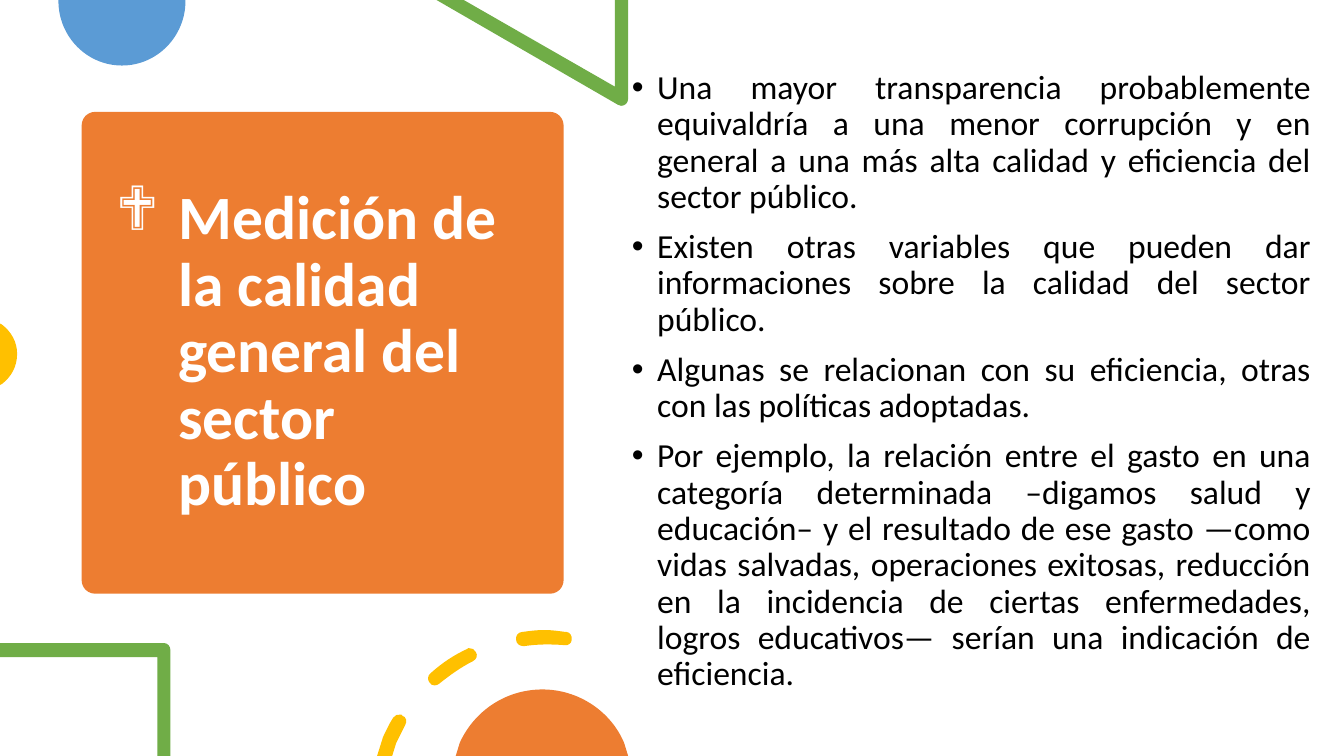
from lxml import etree
from pptx import Presentation
from pptx.dml.color import RGBColor
from pptx.enum.shapes import MSO_SHAPE as Shape
from pptx.enum.text import MSO_ANCHOR as Anchor, PP_ALIGN as Align
from pptx.oxml.ns import qn
from pptx.util import Inches, Pt

ORANGE = RGBColor(0xED, 0x7D, 0x31)
BLUE = RGBColor(0x5B, 0x9B, 0xD5)
GREEN = RGBColor(0x70, 0xAD, 0x47)
YELLOW = RGBColor(0xFF, 0xC0, 0x00)
WHITE = RGBColor(0xFF, 0xFF, 0xFF)
BLACK = RGBColor(0x00, 0x00, 0x00)

deck = Presentation()
deck.slide_width, deck.slide_height = Inches(13.33), Inches(7.5)
page = deck.slides.add_slide(deck.slide_layouts[6])


def add_bullets(texts, *, at, bullet, bullet_font, indent, size, color, bold=False,
                align=Align.LEFT, anchor=Anchor.TOP, before=0):
    """Add a text box with one bulleted paragraph per text."""
    box = page.shapes.add_textbox(*(Inches(value) for value in at))
    frame = box.text_frame
    frame.word_wrap = True
    frame.vertical_anchor = anchor
    for number, text in enumerate(texts):
        para = frame.add_paragraph() if number else frame.paragraphs[0]
        para.alignment = align
        para.line_spacing = 0.9
        para.space_before = Pt(before)
        span = para.add_run()
        span.text = text
        span.font.name = "Calibri"
        span.font.size = Pt(size)
        span.font.bold = bold
        span.font.color.rgb = color
        props = para._p.get_or_add_pPr()
        props.set("marL", str(Inches(indent)))
        props.set("indent", str(-Inches(indent)))
        etree.SubElement(props, qn("a:buFont")).set("typeface", bullet_font)
        etree.SubElement(props, qn("a:buChar")).set("char", bullet)


def add_outline(contours, color):
    """Fill closed contours: a pair is a corner, six numbers a Bézier curve."""
    builder = None
    for start, *steps in contours:
        origin = [Inches(value) for value in start]
        if builder is None:
            builder = page.shapes.build_freeform(*origin)
        else:
            builder.move_to(*origin)
        builder.add_line_segments([(Inches(step[-2]), Inches(step[-1])) for step in steps],
                                  close=True)
    outline = builder.convert_to_shape()
    outline.shadow.inherit = False
    outline.fill.solid()
    outline.fill.fore_color.rgb = color
    outline.line.fill.background()

    # Bend the segments that carry control points
    segments = list(outline._element.iter(qn("a:lnTo")))
    steps = [step for contour in contours for step in contour[1:]]
    for segment, step in zip(segments, steps):
        if len(step) == 6:
            segment.tag = qn("a:cubicBezTo")
            for place in (0, 1):
                x, y = step[2 * place:2 * place + 2]
                control = etree.Element(qn("a:pt"))
                control.set("x", str(Inches(x) - outline.left))
                control.set("y", str(Inches(y) - outline.top))
                segment.insert(place, control)


# Title card
card = page.shapes.add_shape(Shape.ROUNDED_RECTANGLE, Inches(0.81), Inches(1.11),
                             Inches(4.78), Inches(4.78))
card.adjustments[0] = 0.028
card.shadow.inherit = False
card.fill.solid()
card.fill.fore_color.rgb = ORANGE
card.line.fill.background()
add_bullets(["Medición de la calidad general del sector público"],
            at=(1.05, 1.22, 4.31, 4.56), bullet="❖", bullet_font="Wingdings", indent=0.62,
            size=44, color=WHITE, bold=True, anchor=Anchor.MIDDLE)

# Top decorations: blue disc and green triangle
add_outline([[(1.84, 0), (0.58, 0), (0.58, 0.01), (0.58, 0.36, 0.86, 0.65, 1.21, 0.65),
              (1.56, 0.65, 1.84, 0.36, 1.84, 0.01)]], BLUE)
add_outline([[(6.23, 0), (6.1, 0), (6.1, 0.86), (4.6, 0), (4.33, 0), (6.13, 1.04),
              (6.14, 1.05, 6.15, 1.05, 6.16, 1.05),
              (6.2, 1.05, 6.23, 1.02, 6.23, 0.98)]], GREEN)

# Yellow disc on the left edge
add_outline([[(0, 3.21), (0, 3.82), (0.02, 3.81), (0.11, 3.74, 0.17, 3.64, 0.17, 3.51),
              (0.17, 3.39, 0.11, 3.29, 0.02, 3.22)]], YELLOW)

# Body text
add_bullets([
    "Una mayor transparencia probablemente equivaldría a una menor corrupción y en "
    "general a una más alta calidad y eficiencia del sector público.",
    "Existen otras variables que pueden dar informaciones sobre la calidad del sector "
    "público. ",
    "Algunas se relacionan con su eficiencia, otras con las políticas adoptadas. ",
    "Por ejemplo, la relación entre el gasto en una categoría determinada –digamos salud "
    "y educación– y el resultado de ese gasto —como vidas salvadas, operaciones exitosas, "
    "reducción en la incidencia de ciertas enfermedades, logros educativos— serían una "
    "indicación de eficiencia.",
], at=(6.17, 0.65, 6.93, 6.34), bullet="•", bullet_font="Arial", indent=0.25, size=24,
    color=BLACK, align=Align.JUSTIFY, before=10)

# Bottom decorations: green frame, yellow dashed arc, orange disc
add_outline([[(1.63, 6.38), (0, 6.38), (0, 6.52), (1.56, 6.52), (1.56, 7.5), (1.69, 7.5),
              (1.69, 6.45), (1.69, 6.41, 1.66, 6.38, 1.63, 6.38)]], GREEN)
lower_dash = [(3.97, 7.09), (3.94, 7.08, 3.92, 7.1, 3.9, 7.12),
              (3.86, 7.18, 3.83, 7.25, 3.8, 7.31), (3.74, 7.5), (3.89, 7.5), (3.93, 7.37),
              (3.96, 7.31, 3.99, 7.25, 4.02, 7.19), (4.04, 7.16, 4.03, 7.11, 3.99, 7.1),
              (3.99, 7.09, 3.98, 7.09, 3.97, 7.09)]
middle_dash = [(4.65, 6.43), (4.65, 6.43, 4.64, 6.43, 4.63, 6.44),
               (4.5, 6.5, 4.38, 6.58, 4.27, 6.68), (4.24, 6.7, 4.24, 6.75, 4.26, 6.77),
               (4.27, 6.79, 4.29, 6.8, 4.31, 6.8), (4.33, 6.8, 4.35, 6.79, 4.36, 6.78),
               (4.46, 6.7, 4.57, 6.62, 4.69, 6.56), (4.73, 6.54, 4.74, 6.5, 4.72, 6.47),
               (4.71, 6.44, 4.68, 6.43, 4.65, 6.43)]
upper_dash = [(5.4, 6.25), (5.32, 6.25, 5.25, 6.26, 5.18, 6.27),
              (5.14, 6.27, 5.11, 6.31, 5.12, 6.35), (5.12, 6.38, 5.15, 6.41, 5.19, 6.41),
              (5.19, 6.41, 5.19, 6.41, 5.2, 6.41), (5.33, 6.39, 5.46, 6.39, 5.6, 6.4),
              (5.63, 6.41, 5.67, 6.38, 5.67, 6.35), (5.68, 6.31, 5.65, 6.27, 5.62, 6.27),
              (5.62, 6.27, 5.61, 6.27, 5.61, 6.27), (5.54, 6.26, 5.47, 6.25, 5.4, 6.25)]
add_outline([lower_dash, middle_dash, upper_dash], YELLOW)
add_outline([[(5.38, 6.84), (5.01, 6.84, 4.7, 7.06, 4.56, 7.37), (4.52, 7.5), (6.23, 7.5),
              (6.19, 7.37), (6.06, 7.06, 5.74, 6.84, 5.38, 6.84)]], ORANGE)

deck.save("out.pptx")
